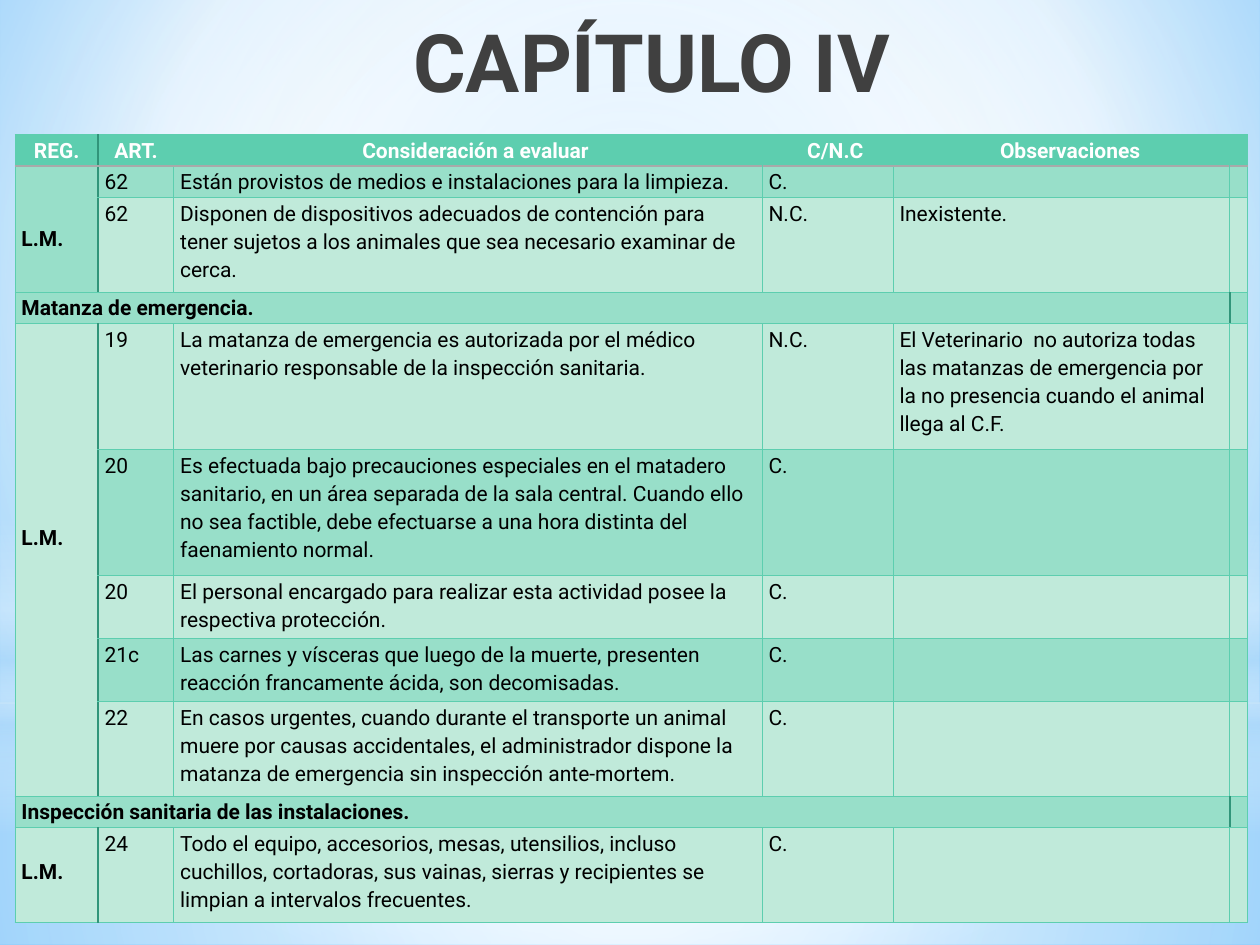
import pptx
import pptx.util
import pptx.dml.color
import pptx.enum.shapes
import pptx.enum.text
import pptx.oxml
import pptx.oxml.ns
from pptx.util import Inches

FONT = "Roboto"
COLORS = {
    "white": "FFFFFF", "black": "000000", "title": "404040",
    "header": "5DCEAF", "dark_band": "98DFC9", "light_band": "C0EADA",
    "accent_line": "31957A", "header_line": "A9A9A9",
    "sky": "9ED5FF", "deep_sky": "5BB9FF", "haze": "B4DCFA",
}
CENTER = (50, 50, 50, 50)
COLUMN_WIDTHS = [0.66, 0.6, 4.67, 0.12, 0.92, 2.67, 0.12]
ROW_HEIGHTS = [0.25, 0.25, 0.75, 0.25, 1, 1, 0.5, 0.5, 0.75, 0.25, 0.75]
HEADER_ROW = 0
SECTION_ROWS = {3: "Matanza de emergencia.",
                9: "Inspección sanitaria de las instalaciones."}
HEADINGS = {0: "REG.", 1: "ART.", 2: "Consideración a evaluar",
            4: "C/N.C", 5: "Observaciones"}
REGULATIONS = [(1, 2, 2), (4, 8, 7), (10, 10, 1)]
BLANK_LINE = 0.225
ARTICLES = {
    1: ("62", "Están provistos de medios e instalaciones para la limpieza.", "C.", ""),
    2: ("62", "Disponen de dispositivos adecuados de contención para tener sujetos "
        "a los animales que sea necesario examinar de cerca.", "N.C.", "Inexistente."),
    4: ("19", "La matanza de emergencia es autorizada por el médico veterinario "
        "responsable de la inspección sanitaria.", "N.C.",
        "El Veterinario  no autoriza todas las matanzas de emergencia por la no "
        "presencia cuando el animal llega al C.F."),
    5: ("20", "Es efectuada bajo precauciones especiales en el matadero sanitario, en un "
        "área separada de la sala central. Cuando ello no sea factible, debe efectuarse "
        "a una hora distinta del faenamiento normal.", "C.", ""),
    6: ("20", "El personal encargado para realizar esta actividad posee la respectiva "
        "protección.", "C.", ""),
    7: ("21c", "Las carnes y vísceras que luego de la muerte, presenten reacción "
        "francamente ácida, son decomisadas.", "C.", ""),
    8: ("22", "En casos urgentes, cuando durante el transporte un animal muere por causas "
        "accidentales, el administrador dispone la matanza de emergencia sin inspección "
        "ante-mortem.", "C.", ""),
    10: ("24", "Todo el equipo, accesorios, mesas, utensilios, incluso cuchillos, "
         "cortadoras, sus vainas, sierras y recipientes se limpian a intervalos "
         "frecuentes.", "C.", ""),
}


def rgb(name):
    return pptx.dml.color.RGBColor.from_string(COLORS[name])


def apply_gradient(fill, properties, stops, focus=None):
    fill.solid()
    stop_xml = "".join(
        f'<a:gs pos="{position * 1000}"><a:srgbClr val="{COLORS[color]}">'
        f'<a:alpha val="{opacity * 1000}"/></a:srgbClr></a:gs>'
        for position, color, opacity in stops)
    if focus:
        left, top, right, bottom = (value * 1000 for value in focus)
        direction = (f'<a:path path="circle"><a:fillToRect l="{left}" t="{top}" '
                     f'r="{right}" b="{bottom}"/></a:path>')
    else:
        direction = '<a:lin ang="5400000" scaled="0"/>'
    gradient = pptx.oxml.parse_xml(
        f'<a:gradFill {pptx.oxml.ns.nsdecls("a")} rotWithShape="1">'
        f'<a:gsLst>{stop_xml}</a:gsLst>{direction}</a:gradFill>')
    solid = properties.find(pptx.oxml.ns.qn("a:solidFill"))
    properties.replace(solid, gradient)


def add_glow(slide, kind, top, height, stops, focus=None):
    shape = slide.shapes.add_shape(kind, 0, Inches(top), Inches(10), Inches(height))
    shape.shadow.inherit = False
    shape.line.fill.background()
    apply_gradient(shape.fill, shape._element.spPr, stops, focus)


def add_backdrop(slide):
    background = slide.background.fill
    background.solid()
    apply_gradient(background, slide._element.cSld.bg.bgPr,
                   [(0, "sky", 100), (60, "white", 100), (100, "deep_sky", 100)],
                   (20, 10, 20, 60))
    kinds = pptx.enum.shapes.MSO_SHAPE
    add_glow(slide, kinds.RECTANGLE, 5.58, 1.92,
             [(0, "white", 91), (37, "white", 76), (100, "haze", 79)], CENTER)
    add_glow(slide, kinds.RECTANGLE, 0, 5.58,
             [(0, "white", 89), (48, "white", 62), (100, "haze", 79)], CENTER)
    add_glow(slide, kinds.RECTANGLE, 4.12, 2.5,
             [(0, "white", 0), (29, "white", 30), (45, "haze", 40),
              (55, "white", 26), (65, "haze", 60), (100, "white", 0)])
    add_glow(slide, kinds.OVAL, 1.75, 5.58,
             [(0, "white", 100), (56, "white", 0)], CENTER)


def add_text(paragraph, text, size, color, bold):
    run = paragraph.add_run()
    run.text = text
    run.font.name = FONT
    run.font.size = pptx.util.Pt(size)
    run.font.bold = bold
    run.font.color.rgb = rgb(color)


def add_title(slide):
    box = slide.shapes.add_textbox(Inches(1.61), Inches(0.05), Inches(7.12), Inches(0.9))
    box.text_frame.word_wrap = True
    paragraph = box.text_frame.paragraphs[0]
    paragraph.alignment = pptx.enum.text.PP_ALIGN.CENTER
    add_text(paragraph, "CAPÍTULO IV", 46, "title", True)


def set_borders(cell, row, column):
    thin = ("header", 0.75)
    accent = ("accent_line", 1.25)
    divider = ("header_line", 1.25)
    accent_column = 6 if row in SECTION_ROWS else 1
    borders = {
        "L": accent if column == accent_column else thin,
        "R": accent if column == 0 else thin,
        "T": divider if row == 1 and column > 0 else thin,
        "B": divider if row == HEADER_ROW else thin,
    }
    properties = cell._tc.get_or_add_tcPr()
    for index, (side, (color, width)) in enumerate(borders.items()):
        properties.insert(index, pptx.oxml.parse_xml(
            f'<a:ln{side} {pptx.oxml.ns.nsdecls("a")} w="{int(width * 12700)}">'
            f'<a:solidFill><a:srgbClr val="{COLORS[color]}"/></a:solidFill></a:ln{side}>'))


def format_cell(cell, row, column):
    cell.margin_left = cell.margin_right = Inches(0.05)
    cell.margin_top = cell.margin_bottom = 0
    cell.fill.solid()
    band = "dark_band" if row % 2 else "light_band"
    cell.fill.fore_color.rgb = rgb("header" if row == HEADER_ROW else band)
    set_borders(cell, row, column)
    paragraph = cell.text_frame.paragraphs[0]
    paragraph.line_spacing = 1.15
    paragraph._p.append(pptx.oxml.parse_xml(
        f'<a:endParaRPr {pptx.oxml.ns.nsdecls("a")} sz="1200"/>'))


def write_cell(cell, text, color="black", bold=False, centered=False):
    paragraph = cell.text_frame.paragraphs[0]
    if centered:
        paragraph.alignment = pptx.enum.text.PP_ALIGN.CENTER
    if text:
        add_text(paragraph, text, 12, color, bold)


def add_checklist(slide):
    frame = slide.shapes.add_table(
        len(ROW_HEIGHTS), len(COLUMN_WIDTHS), Inches(0.12), Inches(1.07),
        Inches(sum(COLUMN_WIDTHS)), Inches(sum(ROW_HEIGHTS)))
    table = frame.table
    table.first_row = table.horz_banding = False
    for column, width in zip(table.columns, COLUMN_WIDTHS):
        column.width = Inches(width)
    for row, height in zip(table.rows, ROW_HEIGHTS):
        row.height = Inches(height)
    for row in range(len(ROW_HEIGHTS)):
        for column in range(len(COLUMN_WIDTHS)):
            format_cell(table.cell(row, column), row, column)

    for first, last in ((2, 3), (5, 6)):
        table.cell(HEADER_ROW, first).merge(table.cell(HEADER_ROW, last))
    for column, heading in HEADINGS.items():
        write_cell(table.cell(HEADER_ROW, column), heading, "white", True, True)
    for row, title in SECTION_ROWS.items():
        table.cell(row, 0).merge(table.cell(row, 5))
        write_cell(table.cell(row, 0), title, bold=True)
    for first, last, blank_lines in REGULATIONS:
        cell = table.cell(first, 0)
        if last > first:
            cell.merge(table.cell(last, 0))
        cell.margin_top = Inches(blank_lines * BLANK_LINE)
        write_cell(cell, "L.M.", bold=True)
    for row, values in ARTICLES.items():
        table.cell(row, 3).merge(table.cell(row, 4))
        for column, value in zip((1, 2, 3, 5), values):
            write_cell(table.cell(row, column), value)


def main():
    presentation = pptx.Presentation()
    presentation.slide_width = Inches(10)
    presentation.slide_height = Inches(7.5)
    slide = presentation.slides.add_slide(presentation.slide_layouts[6])
    add_backdrop(slide)
    add_title(slide)
    add_checklist(slide)
    presentation.save("out.pptx")


if __name__ == "__main__":
    main()
